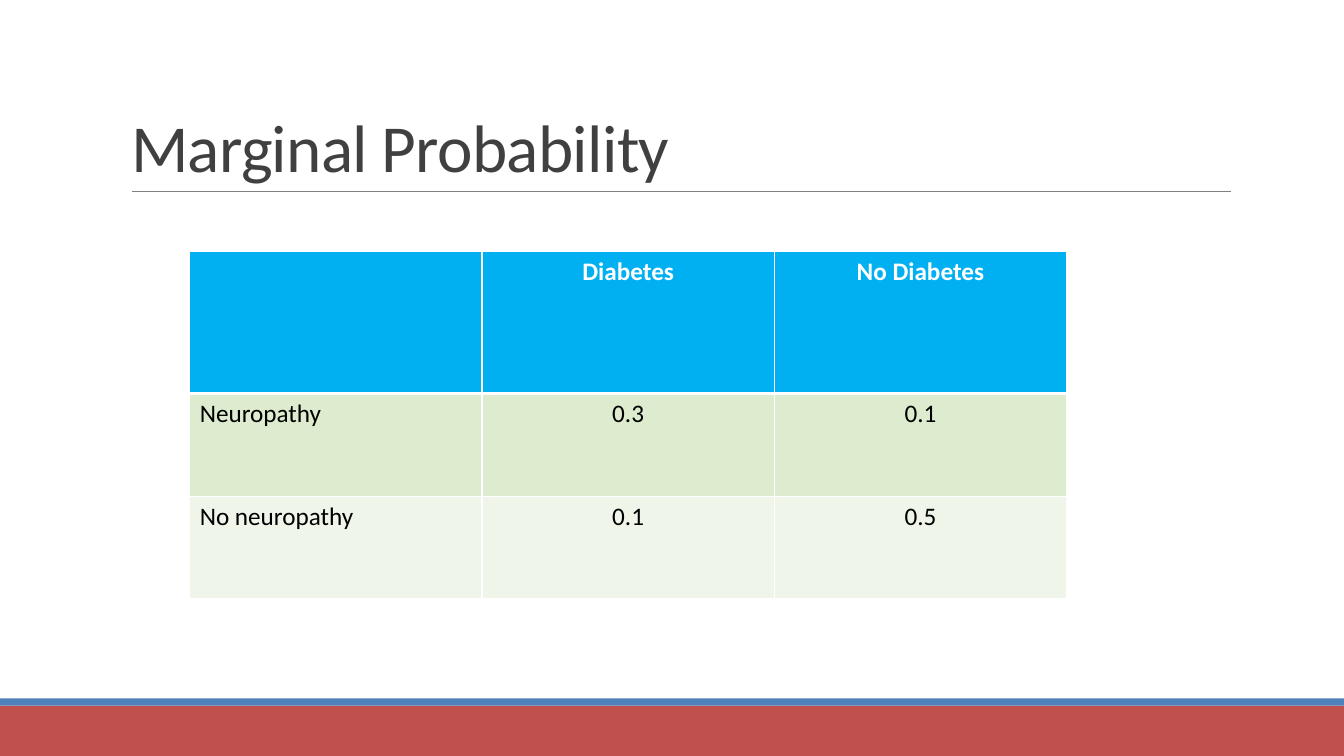
import pptx
import pptx.dml.color
import pptx.enum.shapes
import pptx.enum.text
import pptx.oxml
import pptx.oxml.ns
import pptx.util

Pt = pptx.util.Pt
ALIGN = pptx.enum.text.PP_ALIGN
WIDTH, HEIGHT = 960, 540


def color(value):
    return pptx.dml.color.RGBColor.from_string(value)


def apply(target, values):
    for name, value in values.items():
        setattr(target, name, value)


class SlideBuilder:
    font_name = "Calibri"

    def __init__(self, presentation):
        self.slide = presentation.slides.add_slide(presentation.slide_layouts[5])

    def style_font(self, font, size, fill, bold=False):
        apply(font, {"name": self.font_name, "size": Pt(size), "bold": bold})
        font.color.rgb = color(fill)

    def title(self, text, left, top, width, height):
        shape = self.slide.shapes.title
        apply(shape, {"left": Pt(left), "top": Pt(top),
                      "width": Pt(width), "height": Pt(height)})
        frame = shape.text_frame
        apply(frame, {"word_wrap": True,
                      "auto_size": pptx.enum.text.MSO_AUTO_SIZE.NONE,
                      "vertical_anchor": pptx.enum.text.MSO_ANCHOR.BOTTOM})
        paragraph = frame.paragraphs[0]
        apply(paragraph, {"text": text, "alignment": ALIGN.LEFT, "line_spacing": 0.85})
        run = paragraph.runs[0]
        self.style_font(run.font, 48, "404040")
        run.font._element.set("spc", "-50")

    def band(self, top, height, fill):
        shape = self.slide.shapes.add_shape(
            pptx.enum.shapes.MSO_SHAPE.RECTANGLE, 0, Pt(top), Pt(WIDTH), Pt(height))
        shape.shadow.inherit = False
        shape.fill.solid()
        shape.fill.fore_color.rgb = color(fill)
        shape.line.fill.background()

    def rule(self, left, right, y, fill):
        line = self.slide.shapes.add_connector(
            pptx.enum.shapes.MSO_CONNECTOR.STRAIGHT, Pt(left), Pt(y), Pt(right), Pt(y))
        line.line.width = Pt(0.5)
        line.line.color.rgb = color(fill)
        line._element.spPr.append(pptx.oxml.parse_xml(
            f'<a:effectLst {pptx.oxml.ns.nsdecls("a")}/>'))

    def border(self, cell, side, width):
        cell._tc.get_or_add_tcPr().append(pptx.oxml.parse_xml(
            f'<a:ln{side} {pptx.oxml.ns.nsdecls("a")} w="{Pt(width)}">'
            '<a:solidFill><a:srgbClr val="FFFFFF"/></a:solidFill>'
            f'</a:ln{side}>'))

    def table(self, rows, left, top, column_width, row_heights, fills):
        table = self.slide.shapes.add_table(
            len(rows), len(rows[0]), Pt(left), Pt(top),
            Pt(column_width * len(rows[0])), Pt(sum(row_heights))).table
        for column in table.columns:
            column.width = Pt(column_width)
        for row_index, texts in enumerate(rows):
            table.rows[row_index].height = Pt(row_heights[row_index])
            header = row_index == 0
            widths = {"L": 0.96, "R": 0.96,
                      "T": 3 if row_index == 1 else 0.96,
                      "B": 3 if header else 0.96}
            for column_index, text in enumerate(texts):
                cell = table.cell(row_index, column_index)
                for side, width in widths.items():
                    self.border(cell, side, width)
                cell.fill.solid()
                cell.fill.fore_color.rgb = color(fills[row_index])
                paragraph = cell.text_frame.paragraphs[0]
                apply(paragraph, {"text": text,
                                  "alignment": ALIGN.CENTER if column_index else ALIGN.LEFT})
                font = paragraph.runs[0].font if text else paragraph.font
                self.style_font(font, 18, "FFFFFF" if header else "000000", header)


def main():
    presentation = pptx.Presentation()
    apply(presentation, {"slide_width": Pt(WIDTH), "slide_height": Pt(HEIGHT)})
    builder = SlideBuilder(presentation)
    builder.band(504, 36, "C0504D")
    builder.band(498.8, 5.2, "4F81BD")
    builder.rule(94, 879, 136.8, "808080")
    builder.title("Marginal Probability", 86.4, 22.6, 792, 114.2)
    builder.table(
        [["", "Diabetes", "No Diabetes"],
         ["Neuropathy", "0.3", "0.1"],
         ["No neuropathy", "0.1", "0.5"]],
        135.5, 179.5, 208.8, [101.5, 73.5, 73.5],
        ["00B0F0", "DDEBCE", "EFF5E8"])
    presentation.save("out.pptx")


if __name__ == "__main__":
    main()
